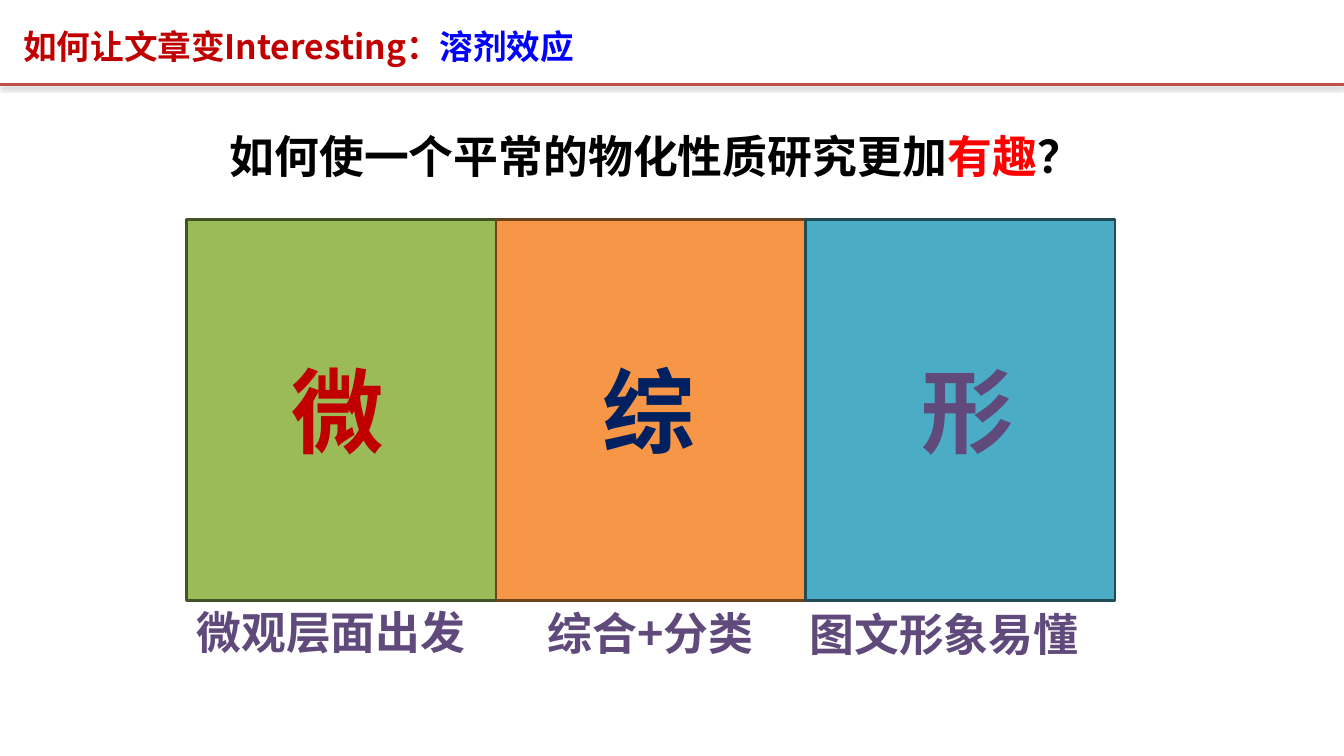
from lxml.etree import SubElement
from pptx import Presentation
from pptx.dml.color import RGBColor
from pptx.enum.shapes import MSO_CONNECTOR, MSO_SHAPE
from pptx.enum.text import MSO_ANCHOR, MSO_AUTO_SIZE, PP_ALIGN
from pptx.oxml.ns import qn
from pptx.util import Inches, Pt

FONT = "Noto Sans CJK SC"
PURPLE = "604A7B"

HEADING = [("如何让文章变Interesting：", "C00000"), ("溶剂效应", "0000FF")]
QUESTION = [
    ("如何使一个平常的物化性质研究更加", "000000"),
    ("有趣", "FF0000"),
    ("？", "000000"),
]
PANELS = [
    {"fill": "9BBB59", "edge": "445227", "keyword": "微", "ink": "C00000",
     "keyword_left": 2.79, "caption": "微观层面出发", "caption_at": (1.85, 5.95, 3.23)},
    {"fill": "F79646", "edge": "6C421F", "keyword": "综", "ink": "002060",
     "keyword_left": 5.88, "caption": "综合+分类", "caption_at": (5.33, 5.96, 2.51)},
    {"fill": "4BACC6", "edge": "214B57", "keyword": "形", "ink": PURPLE,
     "keyword_left": 9.04, "caption": "图文形象易懂", "caption_at": (7.93, 5.97, 3.07)},
]
PANEL_LEFT, PANEL_TOP, PANEL_WIDTH, PANEL_HEIGHT = 1.85, 2.18, 3.07, 3.78


def color(code):
    return RGBColor.from_string(code)


def write(runs, left, top, width, height, size, align=PP_ALIGN.JUSTIFY, holder=None):
    box = [Inches(length) for length in (left, top, width, height)]
    if holder is None:
        holder = slide.shapes.add_textbox(*box)
    holder.left, holder.top, holder.width, holder.height = box
    frame = holder.text_frame
    frame.word_wrap = True
    frame.auto_size = MSO_AUTO_SIZE.SHAPE_TO_FIT_TEXT
    frame.vertical_anchor = MSO_ANCHOR.TOP
    paragraph = frame.paragraphs[0]
    paragraph.alignment = align
    for words, ink in runs:
        run = paragraph.add_run()
        run.text = words
        run.font.size = Pt(size)
        run.font.bold = True
        run.font.color.rgb = color(ink)
        run.font.name = FONT
        SubElement(run.font._element, qn("a:ea"), typeface=FONT)


def add_heading_rule(y):
    rule = slide.shapes.add_connector(
        MSO_CONNECTOR.STRAIGHT, 0, Inches(y), deck.slide_width, Inches(y))
    rule.line.color.rgb = color("C0504D")
    rule.line.width = Pt(2)
    effects = SubElement(rule._element.spPr, qn("a:effectLst"))
    shadow = SubElement(effects, qn("a:outerShdw"), blurRad=str(Pt(3.1)),
                        dist=str(Pt(1.6)), dir="5400000", rotWithShape="0")
    tint = SubElement(shadow, qn("a:srgbClr"), val="000000")
    SubElement(tint, qn("a:alpha"), val="38000")


def add_panel(index, fill, edge):
    panel = slide.shapes.add_shape(
        MSO_SHAPE.RECTANGLE, Inches(PANEL_LEFT + index * PANEL_WIDTH),
        Inches(PANEL_TOP), Inches(PANEL_WIDTH), Inches(PANEL_HEIGHT))
    panel.shadow.inherit = False
    panel.fill.solid()
    panel.fill.fore_color.rgb = color(fill)
    panel.line.color.rgb = color(edge)
    panel.line.width = Pt(2)


deck = Presentation()
deck.slide_width, deck.slide_height = Inches(13.33), Inches(7.5)
slide = deck.slides.add_slide(deck.slide_layouts[5])

add_heading_rule(0.84)
write(HEADING, 0.13, 0.21, 13.07, 0.51, size=24, align=PP_ALIGN.LEFT,
      holder=slide.shapes.title)
write(QUESTION, 2.18, 1.23, 11.63, 0.64, size=32)

for index, panel in enumerate(PANELS):
    add_panel(index, panel["fill"], panel["edge"])
for panel in PANELS:
    write([(panel["keyword"], panel["ink"])], panel["keyword_left"], 3.46, 1.18, 1.21, size=66)
    write([(panel["caption"], PURPLE)], *panel["caption_at"], 0.64, size=32)

deck.save("out.pptx")
